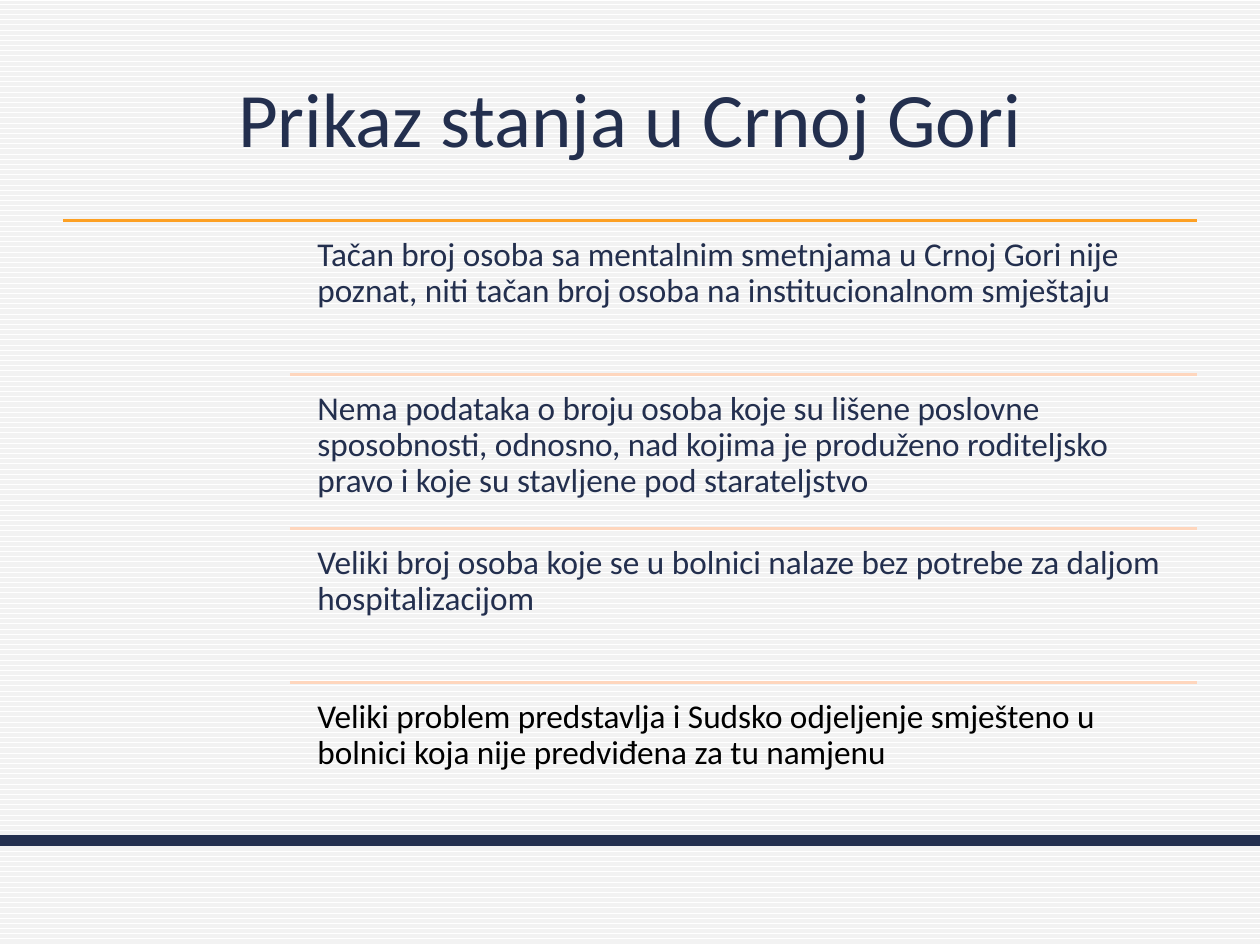
import pptx
import pptx.dml.color
import pptx.enum.dml
import pptx.enum.shapes
import pptx.enum.text
import pptx.oxml
import pptx.util

RGBColor = pptx.dml.color.RGBColor
NAVY = RGBColor(0x23, 0x2F, 0x4E)
ORANGE = RGBColor(0xFD, 0xA0, 0x23)
PEACH = RGBColor(0xFE, 0xD6, 0xBD)
BLACK = RGBColor(0, 0, 0)
PALE = RGBColor(0xF2, 0xF2, 0xF2)
WHITE = RGBColor(0xFF, 0xFF, 0xFF)

COLUMNS, ROWS = 200, 150
LEFT, INDENT, RIGHT = 10, 46, 190
LIST_TOP, PITCH = 35, 24.45
TEXT_LEFT, TEXT_WIDTH, TEXT_HEIGHT, TEXT_GAP = 48.8, 141.4, 23.2, 1.2

FINDINGS = [
    ("Tačan broj osoba sa mentalnim smetnjama u Crnoj Gori nije poznat, "
     "niti tačan broj osoba na institucionalnom smještaju", NAVY),
    ("Nema podataka o broju osoba koje su lišene poslovne sposobnosti, odnosno, "
     "nad kojima je produženo roditeljsko pravo i koje su stavljene pod starateljstvo", NAVY),
    ("Veliki broj osoba koje se u bolnici nalaze bez potrebe za daljom "
     "hospitalizacijom", NAVY),
    ("Veliki problem predstavlja i Sudsko odjeljenje smješteno u bolnici "
     "koja nije predviđena za tu namjenu", BLACK),
]


class Deck:
    font = "Calibri"

    def __init__(self):
        self.prs = pptx.Presentation()
        self.prs.slide_width = pptx.util.Inches(10)
        self.prs.slide_height = pptx.util.Inches(7.5)
        self.s = self.prs.slides.add_slide(self.prs.slide_layouts[6])

    def x(self, columns):
        return round(self.prs.slide_width * columns / COLUMNS)

    def y(self, rows):
        return round(self.prs.slide_height * rows / ROWS)

    def background(self, front, back):
        fill = self.s.background.fill
        fill.patterned()
        fill.pattern = pptx.enum.dml.MSO_PATTERN.DARK_HORIZONTAL
        fill.fore_color.rgb = front
        fill.back_color.rgb = back

    def rule(self, left, right, row, color, width=1.5):
        line = self.s.shapes.add_connector(
            pptx.enum.shapes.MSO_CONNECTOR.STRAIGHT,
            self.x(left), self.y(row), self.x(right), self.y(row))
        line.line.color.rgb = color
        line.line.width = pptx.util.Pt(width)
        props = line._element.spPr
        props.append(pptx.oxml.parse_xml(
            '<a:effectLst xmlns:a="http://schemas.openxmlformats.org/drawingml/2006/main"/>'))

    def text(self, left, top, width, height, words, size, color):
        sp = self.s.shapes.add_textbox(
            self.x(left), self.y(top), self.x(width), self.y(height))
        tf = sp.text_frame
        tf.word_wrap = True
        p = tf.paragraphs[0]
        r = p.add_run()
        r.text = words
        r.font.name = self.font
        r.font.size = pptx.util.Pt(size)
        r.font.color.rgb = color
        return tf

    def title(self, words):
        tf = self.text(LEFT, 6, RIGHT - LEFT, 25, words, 44, NAVY)
        tf.vertical_anchor = pptx.enum.text.MSO_ANCHOR.MIDDLE
        tf.paragraphs[0].alignment = pptx.enum.text.PP_ALIGN.CENTER

    def finding(self, row, words, color):
        tf = self.text(TEXT_LEFT, row + TEXT_GAP, TEXT_WIDTH, TEXT_HEIGHT, words, 19, color)
        tf.margin_left = tf.margin_right = pptx.util.Inches(0.08)
        tf.margin_top = tf.margin_bottom = pptx.util.Inches(0.08)
        tf.paragraphs[0].line_spacing = 0.9


def main():
    deck = Deck()
    deck.background(PALE, WHITE)
    deck.title("Prikaz stanja u Crnoj Gori")
    for i, (words, color) in enumerate(FINDINGS):
        row = LIST_TOP + i * PITCH
        if i == 0:
            deck.rule(LEFT, RIGHT, row, ORANGE)
        else:
            deck.rule(INDENT, RIGHT, row, PEACH)
        deck.finding(row, words, color)
    deck.rule(0, COLUMNS, 133.4, NAVY, 6)
    deck.prs.save("out.pptx")


if __name__ == "__main__":
    main()
